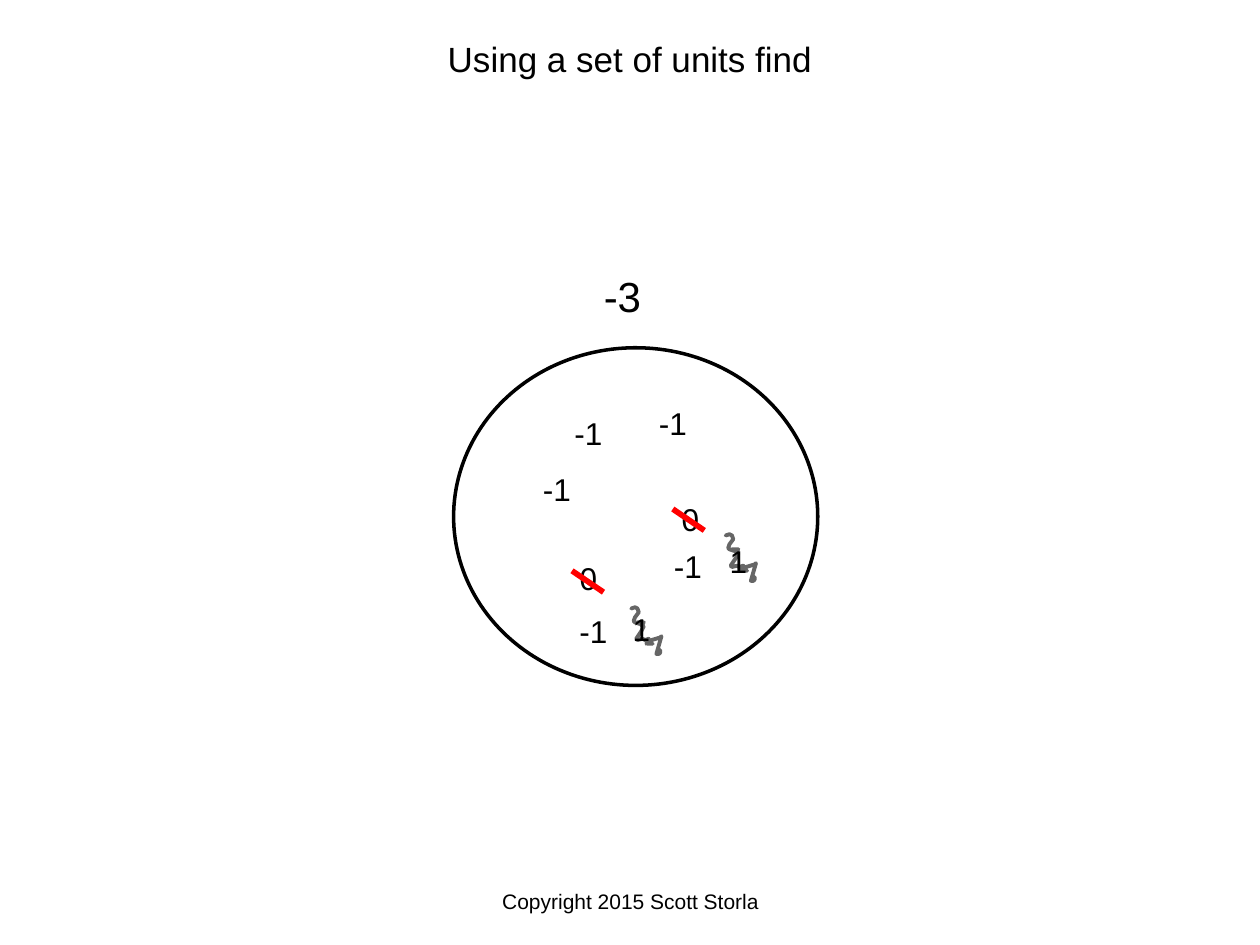
"""Build a slide that shows -3 as a set of units."""
from lxml.etree import SubElement
from pptx import Presentation
from pptx.dml.color import RGBColor as RGB
from pptx.enum.shapes import MSO_CONNECTOR as Link, MSO_SHAPE as Shape
from pptx.enum.text import MSO_ANCHOR as Anchor, PP_ALIGN as Align
from pptx.oxml.ns import qn
from pptx.util import Inches, Pt

COLORS = {"ink": "000000", "paper": "FFFFFF", "strike": "FF0000", "scrawl": "666666"}
TITLE = "Using a set of units find"
FOOTER = "Copyright 2015 Scott Storla"
TOTAL = ("-3", 4.67, 2.1)
UNITS = [
    ("-1", 4.4, 3.24), ("-1", 5.07, 3.16), ("-1", 4.15, 3.68),
    ("0", 4.4, 4.39), ("0", 5.21, 3.92),
    ("-1", 4.44, 4.81), ("1", 4.82, 4.79),
    ("-1", 5.19, 4.29), ("1", 5.59, 4.25),
]
STRIKES = [(5.34, 4.04), (4.54, 4.53)]
SCRAWLS = [(5.01, 4.83), (5.76, 4.25)]
SCRAWL = [
    (0, 0), (3, -1), (5, 0), (6, 3), (3, 7), (2, 10), (3, 11), (6, 12), (9, 12),
    (10, 11), (5, 11), (7, 12), (8, 13), (10, 14), (8, 18), (4, 24), (5, 25),
    (9, 24), (11, 25), (14, 24), (14, 25), (13, 28), (17, 28), (13, 27),
    (12, 28), (13, 26), (23, 23), (24, 22), (20, 36), (22, 36), (23, 35), (23, 33),
]


def tint(name):
    return RGB.from_string(COLORS[name])


def write(shape, text, size, anchor=Anchor.TOP):
    frame = shape.text_frame
    frame.text = text
    frame.word_wrap = True
    frame.vertical_anchor = anchor
    para = frame.paragraphs[0]
    para.alignment = Align.CENTER
    para.font.name = "Arial"
    para.font.size = Pt(size)
    para.font.color.rgb = tint("ink")


def outline(shape, name, width):
    shape.line.color.rgb = tint(name)
    shape.line.width = Pt(width)


def label(shapes, text, x, y, size, high):
    box = shapes.add_textbox(Inches(x), Inches(y), Inches(0.54), Inches(high))
    write(box, text, size)


def scrawl(shapes, x, y):
    pen = shapes.build_freeform(*SCRAWL[0], scale=Inches(0.01))
    pen.add_line_segments(SCRAWL[1:], close=False)
    mark = pen.convert_to_shape(Inches(x), Inches(y))
    mark.shadow.inherit = False
    mark.fill.background()
    outline(mark, "scrawl", 2.25)
    edge = mark.line._get_or_add_ln()
    edge.set("cap", "rnd")
    SubElement(edge, qn("a:round"))


def strike(shapes, x, y):
    line = shapes.add_connector(
        Link.STRAIGHT, Inches(x), Inches(y), Inches(x + 0.25), Inches(y + 0.17))
    outline(line, "strike", 3.25)
    SubElement(line._element.spPr, qn("a:effectLst"))


def main():
    deck = Presentation()
    deck.slide_width, deck.slide_height = Inches(10), Inches(7.5)
    slide = deck.slides.add_slide(deck.slide_layouts[5])
    shapes = slide.shapes

    title = shapes.title
    title.left, title.top = Inches(2), Inches(0.25)
    title.width, title.height = Inches(6), Inches(0.44)
    write(title, TITLE, 20)

    foot = shapes.add_shape(
        Shape.RECTANGLE, Inches(3.42), Inches(6.95), Inches(3.17), Inches(0.4))
    foot.shadow.inherit = False
    foot.fill.solid()
    foot.fill.fore_color.rgb = tint("paper")
    foot.line.fill.background()
    write(foot, FOOTER, 12, Anchor.MIDDLE)

    ring = shapes.add_shape(
        Shape.OVAL, Inches(3.6), Inches(2.76), Inches(2.89), Inches(2.68))
    ring.shadow.inherit = False
    ring.fill.background()
    outline(ring, "ink", 2)

    for spot in SCRAWLS:
        scrawl(shapes, *spot)
    label(shapes, *TOTAL, 24, 0.5)
    for unit in UNITS:
        label(shapes, *unit, 18, 0.4)
    for spot in STRIKES:
        strike(shapes, *spot)
    deck.save("out.pptx")


if __name__ == "__main__":
    main()
